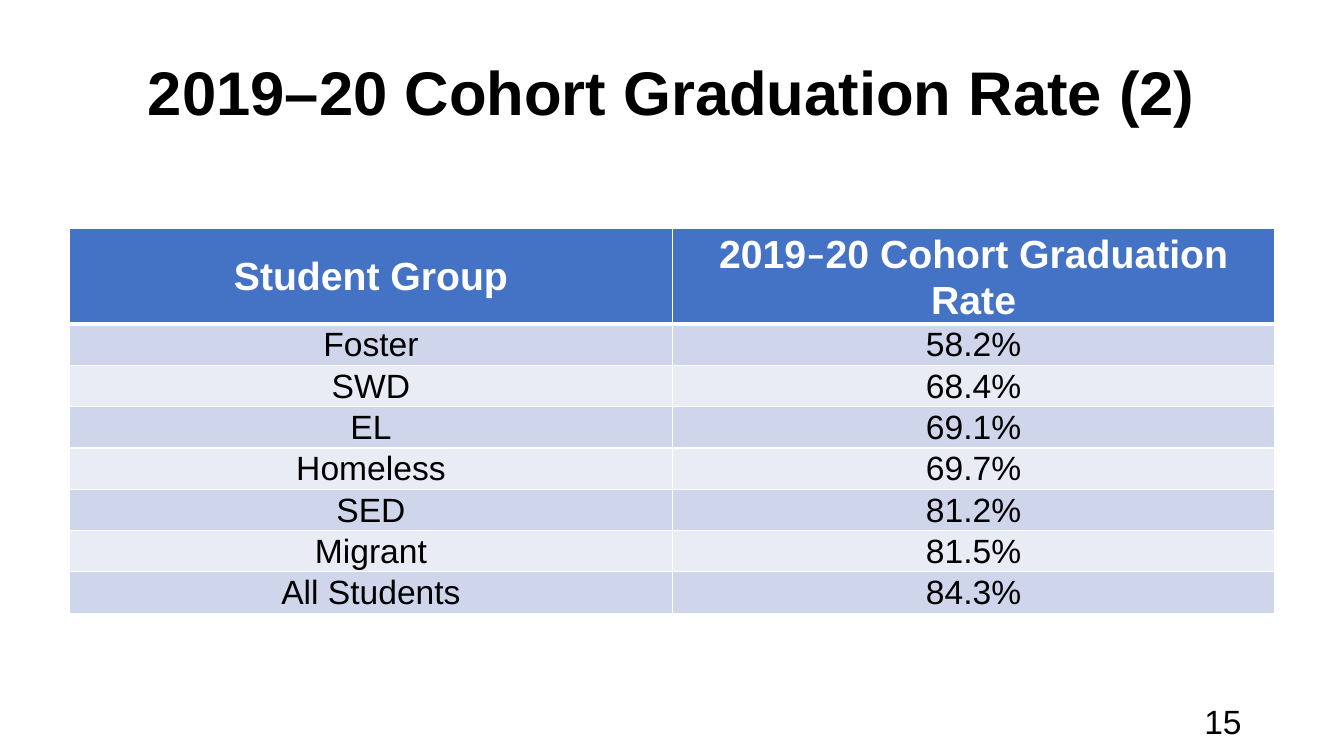
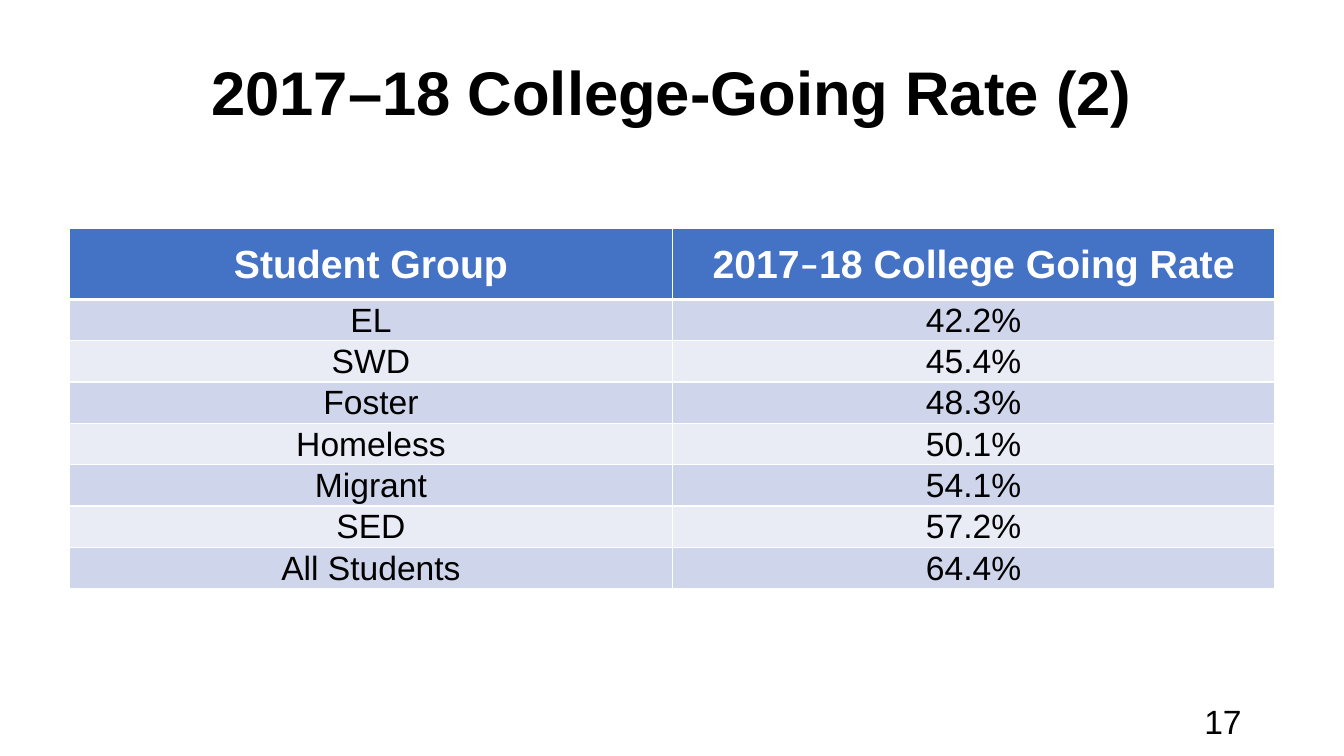
from lxml import etree
from pptx import Presentation
from pptx.dml.color import RGBColor
from pptx.enum.text import MSO_ANCHOR as ANCHOR, PP_ALIGN as ALIGN
from pptx.oxml.ns import qn
from pptx.util import Pt

# Shared look
FONT, DASH_FONT = "Arial", "Calibri"
BLACK, WHITE, HEADER = "000000", "FFFFFF", "4472C4"
BANDS = ["CFD5EA", "E9EBF5"]
SLIDE_W, SLIDE_H = 960, 540
TABLE_X, TABLE_Y, COL_W = 49.7, 163.5, 430.5
HEAD_H, ROW_H = 50.4, 29.15

# Page number, title, header runs, table rows
SLIDES = [
    ("15", "2019–20 Cohort Graduation Rate (2)",
     ["2019", "–", "20 Cohort Graduation Rate"],
     [("Foster", "58.2%"), ("SWD", "68.4%"), ("EL", "69.1%"),
      ("Homeless", "69.7%"), ("SED", "81.2%"), ("Migrant", "81.5%"),
      ("All Students", "84.3%")]),
    ("17", "2017–18 College-Going Rate (2)",
     ["2017", "–", "18 College Going Rate"],
     [("EL", "42.2%"), ("SWD", "45.4%"), ("Foster", "48.3%"),
      ("Homeless", "50.1%"), ("Migrant", "54.1%"), ("SED", "57.2%"),
      ("All Students", "64.4%")]),
]


def rgb(value):
    return RGBColor.from_string(value)


def write(tf, runs, size, color=BLACK, bold=False, align=ALIGN.CENTER):
    p = tf.paragraphs[0]
    p.alignment = align
    for text in runs:
        r = p.add_run()
        r.text = text
        r.font.name = DASH_FONT if text == "–" else FONT
        r.font.size = Pt(size)
        r.font.bold = bold
        r.font.color.rgb = rgb(color)


prs = Presentation()
prs.slide_width, prs.slide_height = Pt(SLIDE_W), Pt(SLIDE_H)

for number, title, rate_head, rows in SLIDES:
    s = prs.slides.add_slide(prs.slide_layouts[6])

    # Title and page number
    for box, text, size, bold, align in [
        ((0, 0, SLIDE_W, 129.6), title, 44, True, ALIGN.CENTER),
        ((678, 500.4, 216, 28.8), number, 24, False, ALIGN.RIGHT),
    ]:
        tf = s.shapes.add_textbox(*map(Pt, box)).text_frame
        tf.word_wrap = True
        tf.vertical_anchor = ANCHOR.MIDDLE
        write(tf, [text], size, bold=bold, align=align)

    # Table grid
    grid = [(["Student Group"], rate_head)]
    grid += [([group], [rate]) for group, rate in rows]
    height = HEAD_H + ROW_H * len(rows)
    table = s.shapes.add_table(len(grid), 2, Pt(TABLE_X), Pt(TABLE_Y),
                               Pt(2 * COL_W), Pt(height)).table
    for col in table.columns:
        col.width = Pt(COL_W)

    # Table cells
    for i, row in enumerate(grid):
        head = i == 0
        table.rows[i].height = Pt(HEAD_H if head else ROW_H)
        for j, runs in enumerate(row):
            cell = table.cell(i, j)
            cell.vertical_anchor = ANCHOR.MIDDLE
            cell.margin_left = cell.margin_right = cell.margin_top = Pt(0.7)
            cell.margin_bottom = Pt(0)
            write(cell.text_frame, runs, 28 if head else 24,
                  WHITE if head else BLACK, head)

            # White borders, thicker under the header
            tc_pr = cell._tc.get_or_add_tcPr()
            for side in "LRTB":
                thick = (i, side) in [(0, "B"), (1, "T")]
                ln = etree.SubElement(tc_pr, qn(f"a:ln{side}"),
                                      w=str(Pt(3 if thick else 1)))
                fill = etree.SubElement(ln, qn("a:solidFill"))
                etree.SubElement(fill, qn("a:srgbClr"), val=WHITE)

            cell.fill.solid()
            cell.fill.fore_color.rgb = rgb(HEADER if head else BANDS[(i - 1) % 2])

prs.save("out.pptx")
